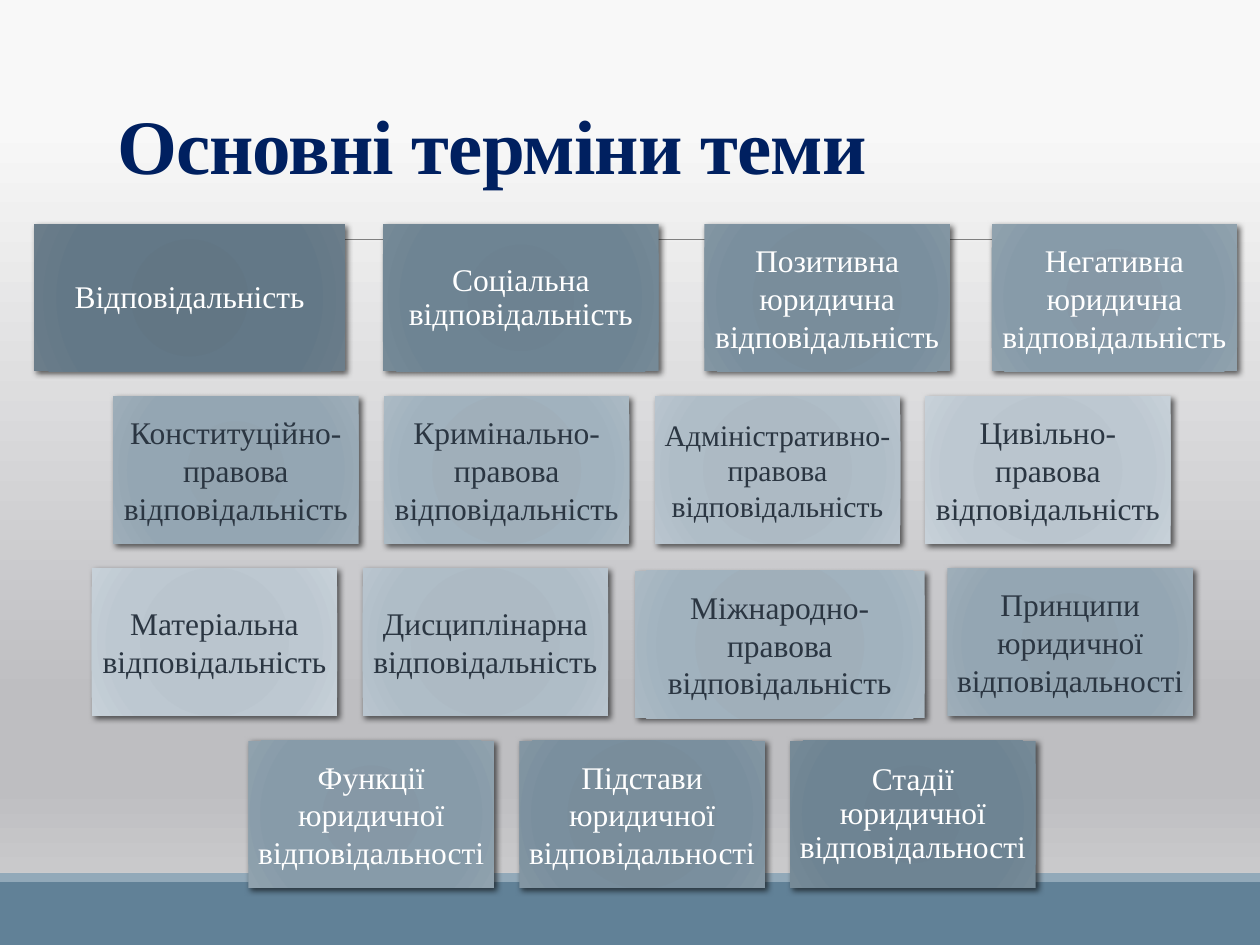
"""Builds the slide of key terms on legal responsibility."""
from lxml import etree
from pptx import Presentation
from pptx.dml.color import RGBColor
from pptx.enum.shapes import MSO_CONNECTOR, MSO_SHAPE
from pptx.enum.text import MSO_ANCHOR, PP_ALIGN
from pptx.oxml import parse_xml
from pptx.oxml.ns import nsdecls, qn
from pptx.util import Cm, Pt

RECT = MSO_SHAPE.RECTANGLE
STRAIGHT = MSO_CONNECTOR.STRAIGHT
CENTER = PP_ALIGN.CENTER
MIDDLE, BOTTOM = MSO_ANCHOR.MIDDLE, MSO_ANCHOR.BOTTOM

FONT = "Times New Roman"
TITLE = "Основні терміни теми"
WHITE, DARK = "FFFFFF", "2B3642"
WIDTH, HEIGHT, TOP, PITCH = 4.95, 2.97, 4.52, 3.47

ROWS = [
    [("Відповідальність", 0.69, 6.27),
     ("Соціальна відповідальність", 7.72, 5.56),
     ("Позитивна юридична відповідальність", 14.2, WIDTH),
     ("Негативна юридична відповідальність", 19.99, WIDTH)],
    [("Конституційно- правова відповідальність", 2.28, WIDTH),
     ("Кримінально-правова відповідальність", 7.74, WIDTH),
     ("Адміністративно- правова відповідальність", 13.2, WIDTH),
     ("Цивільно-правова відповідальність", 18.65, WIDTH)],
    [("Матеріальна відповідальність", 1.85, WIDTH),
     ("Дисциплінарна відповідальність", 7.31, WIDTH),
     ("Міжнародно-правова відповідальність", 12.8, 5.84),
     ("Принципи юридичної відповідальності", 19.1, WIDTH)],
    [("Функції юридичної відповідальності", 5.01, WIDTH),
     ("Підстави юридичної відповідальності", 10.47, WIDTH),
     ("Стадії юридичної відповідальності", 15.93, WIDTH)],
]
SIZES = {"Адміністративно- правова відповідальність": 17}
SHIFTS = {"Міжнародно-правова відповідальність": 0.05}

TONE_STOPS = (0, 34, 70, 100)
TONES = [
    ("617584", "627684", "637887", "6B7D8A"),
    ("6B8190", "6D8291", "6E8493", "768A97"),
    ("778C9A", "798D9B", "7A8F9E", "8396A3"),
    ("8497A5", "8698A6", "879BA9", "90A2AE"),
    ("91A2AF", "93A4B0", "94A6B3", "9EAEB9"),
    ("9EADB9", "A0AFBA", "A1B2BE", "ABBAC4"),
    ("ABB8C3", "ADBAC4", "AFBDC7", "B9C5CF"),
    ("B8C3CC", "BAC5CE", "BDC8D1", "C7D1D9"),
]
BACKGROUND = [(13, "F8F8F8"), (74, "BEBEC1"), (83, "BEBEC1"), (100, "D4D4D5")]
BANDS = [(17.78, 1.27, "618197"), (17.6, 0.18, "92A9B9")]

LINEAR = '<a:lin ang="5400000" scaled="0"/>'
CIRCLE = ('<a:path path="circle"><a:fillToRect l="100000" t="100000" '
          'r="100000" b="100000"/></a:path>')
SHADOW = ('<a:effectLst %s><a:outerShdw blurRad="44450" dist="25400" dir="2700000" '
          'algn="tl" rotWithShape="0"><a:srgbClr val="000000"><a:alpha val="60000"/>'
          '</a:srgbClr></a:outerShdw></a:effectLst>' % nsdecls("a"))


def rgb(value):
    return RGBColor.from_string(value)


def set_gradient(fill, parent, stops, direction):
    fill.solid()
    gs = "".join(f'<a:gs pos="{pos * 1000}"><a:srgbClr val="{color}"/></a:gs>'
                 for pos, color in stops)
    grad = parse_xml(f'<a:gradFill {nsdecls("a")} rotWithShape="1">'
                     f'<a:gsLst>{gs}</a:gsLst>{direction}</a:gradFill>')
    parent.replace(parent.find(qn("a:solidFill")), grad)


def add_rect(s, left, top, width, height):
    sp = s.shapes.add_shape(RECT, Cm(left), Cm(top), Cm(width), Cm(height))
    sp.shadow.inherit = False
    sp.line.fill.background()
    return sp


def write(tf, text, size, color, anchor):
    tf.word_wrap = True
    tf.vertical_anchor = anchor
    p = tf.paragraphs[0]
    p.add_run().text = text
    p.font.name, p.font.size = FONT, Pt(size)
    p.font.color.rgb = rgb(color)
    return p


def add_term(s, text, left, top, width, tone):
    sp = add_rect(s, left, top, width, HEIGHT)
    spPr = sp._element.spPr
    set_gradient(sp.fill, spPr, zip(TONE_STOPS, TONES[tone]), CIRCLE)
    spPr.replace(spPr.find(qn("a:effectLst")), parse_xml(SHADOW))
    tf = sp.text_frame
    tf.margin_left = tf.margin_right = tf.margin_top = tf.margin_bottom = Cm(0.17)
    p = write(tf, text, SIZES.get(text, 18), WHITE if tone < 4 else DARK, MIDDLE)
    p.alignment = CENTER
    if tone < 2:
        p.line_spacing = 0.9


def add_frame(s):
    bgPr_fill = s.background.fill
    bgPr_fill.solid()
    bgPr = s._element.find(".//" + qn("p:bgPr"))
    set_gradient(bgPr_fill, bgPr, BACKGROUND, LINEAR)
    line = s.shapes.add_connector(STRAIGHT, Cm(2.49), Cm(4.83), Cm(23.24), Cm(4.83))
    line.line.color.rgb = rgb("808080")
    line.line.width = Pt(0.5)
    etree.SubElement(line._element.spPr, qn("a:effectLst"))
    for top, height, color in BANDS:
        sp = add_rect(s, 0, top, 25.4, height)
        sp.fill.solid()
        sp.fill.fore_color.rgb = rgb(color)


def add_title(s):
    sp = s.shapes.add_textbox(Cm(2.11), Cm(1.52), Cm(20.96), Cm(2.44))
    p = write(sp.text_frame, TITLE, 44, "002060", BOTTOM)
    p.font.bold = True
    p.line_spacing = 0.85
    p.runs[0].font._element.set("spc", "-50")


def main():
    prs = Presentation()
    prs.slide_width, prs.slide_height = Cm(25.4), Cm(19.05)
    s = prs.slides.add_slide(prs.slide_layouts[6])
    add_frame(s)
    add_title(s)
    terms = [(row, *term) for row, line in enumerate(ROWS) for term in line]
    for i, (row, text, left, width) in enumerate(terms):
        top = TOP + row * PITCH + SHIFTS.get(text, 0)
        add_term(s, text, left, top, width, min(i, len(terms) - i))
    prs.save("out.pptx")


if __name__ == "__main__":
    main()
